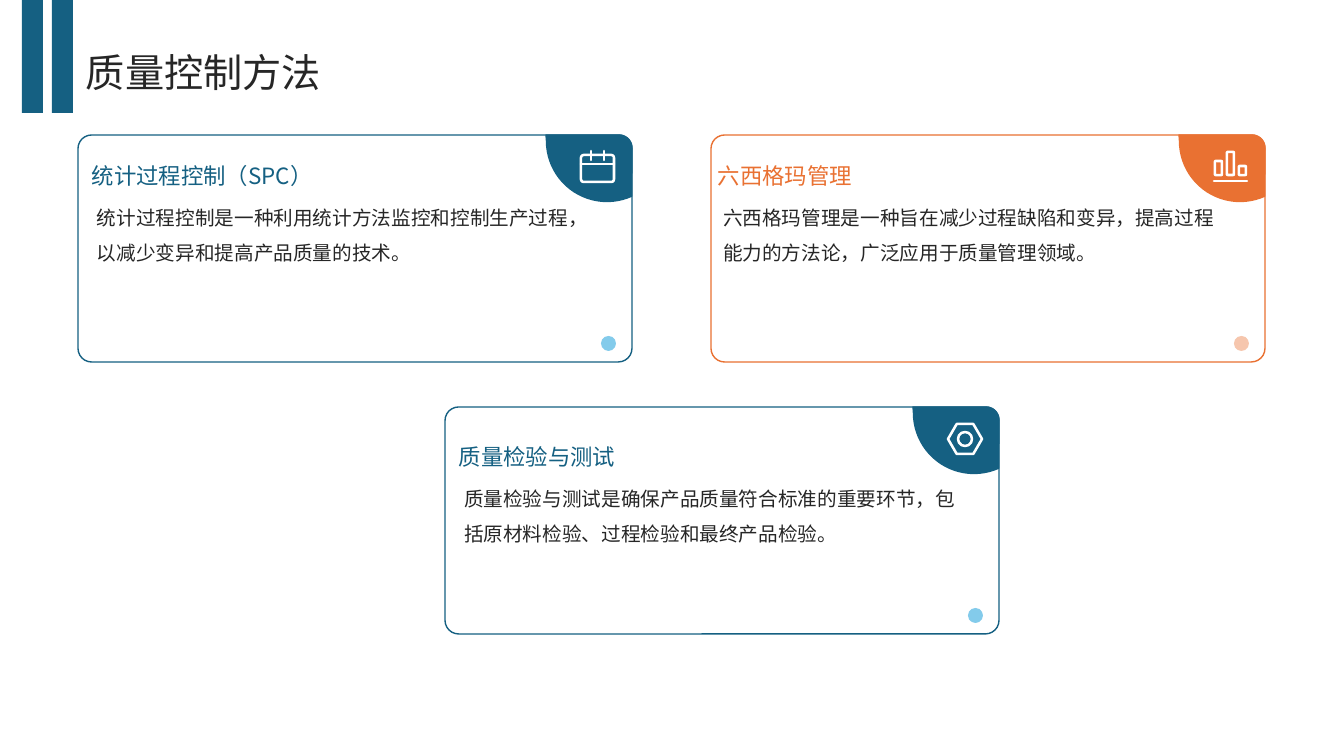
from math import cos, radians, sin

from lxml.etree import SubElement
from pptx import Presentation
from pptx.dml.color import RGBColor
from pptx.enum.shapes import MSO_CONNECTOR, MSO_SHAPE as SHAPE
from pptx.enum.text import MSO_ANCHOR as ANCHOR
from pptx.oxml.ns import qn
from pptx.util import Pt

PX = 9071  # EMU in one px
FONT = "Noto Sans CJK SC"
BLUE, ORANGE, WHITE, INK = "156082", "E97132", "FFFFFF", "262626"
SKY, PEACH = "83CBEB", "F6C6AD"
rgb = RGBColor.from_string

presentation = Presentation()
presentation.slide_width, presentation.slide_height = 1344 * PX, 756 * PX
slide = presentation.slides.add_slide(presentation.slide_layouts[6])
shapes = slide.shapes


def paint(shape, fill=None, line=None, width=1):
    shape.shadow.inherit = False
    if fill:
        shape.fill.solid()
        shape.fill.fore_color.rgb = rgb(fill)
    else:
        shape.fill.background()
    if line:
        shape.line.color.rgb = rgb(line)
        shape.line.width = Pt(width)
    else:
        shape.line.fill.background()


def add_text(text, box, size, colour=INK, spacing=1.0, anchor=ANCHOR.TOP):
    frame = shapes.add_textbox(*(n * PX for n in box)).text_frame
    frame.word_wrap = True
    frame.vertical_anchor = anchor
    frame.margin_left = frame.margin_right = frame.margin_top = frame.margin_bottom = 0
    paragraph = frame.paragraphs[0]
    paragraph.line_spacing = spacing
    run = paragraph.add_run()
    run.text = text
    run.font.size = Pt(size)
    run.font.name = FONT
    run.font.color.rgb = rgb(colour)
    SubElement(run._r.get_or_add_rPr(), qn("a:ea")).set("typeface", FONT)


# Icons: outlined shapes (kind, box, adjustment) and strokes, from the card's corner
calendar = (
    [(SHAPE.ROUNDED_RECTANGLE, (503, 20, 33, 27), 0.1)],
    [(503, 29, 536, 29), (513, 16, 513, 25), (526, 16, 526, 25)],
)
bar_chart = (
    [(SHAPE.ROUNDED_RECTANGLE, (504 + 12 * i, 40 - height, 7, height), 0.1)
     for i, height in enumerate((14, 23, 9))],
    [(503, 46, 536, 46)],
)
nut = (
    [(SHAPE.HEXAGON, (503, 17, 34, 30), 0.29), (SHAPE.OVAL, (513, 25, 14, 14), None)],
    [],
)

# Cards: corner, colour, dot colour, icon, text offset, heading, body
cards = [
    (445, 407, BLUE, SKY, nut, (14, 12), "质量检验与测试",
     "质量检验与测试是确保产品质量符合标准的重要环节，包括原材料检验、过程检验和最终产品检验。"),
    (711, 135, ORANGE, PEACH, bar_chart, (7, 3), "六西格玛管理",
     "六西格玛管理是一种旨在减少过程缺陷和变异，提高过程能力的方法论，广泛应用于质量管理领域。"),
    (78, 135, BLUE, SKY, calendar, (14, 3), "统计过程控制（SPC）",
     "统计过程控制是一种利用统计方法监控和控制生产过程，以减少变异和提高产品质量的技术。"),
]

# Corner tab outline: rounded card corner, then the lower left of a circle
tab = [(468, 0)]
for centre_x, centre_y, radius, start, end in ((541, 13, 13, -90, 0), (529, 6, 60.5, 66, 180)):
    for step in range(25):
        angle = radians(start + (end - start) * step / 24)
        tab.append((centre_x + radius * cos(angle), centre_y + radius * sin(angle)))

for left, top, colour, dot_colour, icon, (text_x, text_y), heading, body in cards:
    # Frame
    frame = shapes.add_shape(SHAPE.ROUNDED_RECTANGLE, left * PX, top * PX, 554 * PX, 227 * PX)
    frame.adjustments[0] = 0.06
    paint(frame, WHITE, colour)

    # Corner tab
    outline = [((left + x) * PX, (top + y) * PX) for x, y in tab]
    builder = shapes.build_freeform(*outline[0])
    builder.add_line_segments(outline[1:], close=True)
    paint(builder.convert_to_shape(), colour, colour)

    # Icon
    parts, strokes = icon
    for kind, (x, y, width, height), adjustment in parts:
        part = shapes.add_shape(kind, (left + x) * PX, (top + y) * PX, width * PX, height * PX)
        if adjustment is not None:
            part.adjustments[0] = adjustment
        paint(part, line=WHITE, width=1.8)
    for x1, y1, x2, y2 in strokes:
        stroke = shapes.add_connector(MSO_CONNECTOR.STRAIGHT, (left + x1) * PX, (top + y1) * PX,
                                      (left + x2) * PX, (top + y2) * PX)
        stroke.line.color.rgb = rgb(WHITE)
        stroke.line.width = Pt(1.8)
        stroke.line._get_or_add_ln().set("cap", "rnd")
        SubElement(stroke._element.spPr, qn("a:effectLst"))

    # Dot
    dot = shapes.add_shape(SHAPE.OVAL, (left + 523) * PX, (top + 201) * PX, 15 * PX, 15 * PX)
    paint(dot, dot_colour)

    # Heading and body
    x, y = left + text_x, top + text_y
    add_text(body, (x + 5, y + 56, 494, 150), size=14, spacing=1.5)
    add_text(heading, (x, y, 433, 51), size=16, colour=colour, spacing=1.3, anchor=ANCHOR.BOTTOM)

# Title and its two bars
add_text("质量控制方法", (86, 44, 1176, 51), size=28, spacing=1.1, anchor=ANCHOR.MIDDLE)
for left in (22, 52):
    bar = shapes.add_shape(SHAPE.RECTANGLE, left * PX, 0, 21 * PX, 113 * PX)
    paint(bar, BLUE)

presentation.save("out.pptx")
